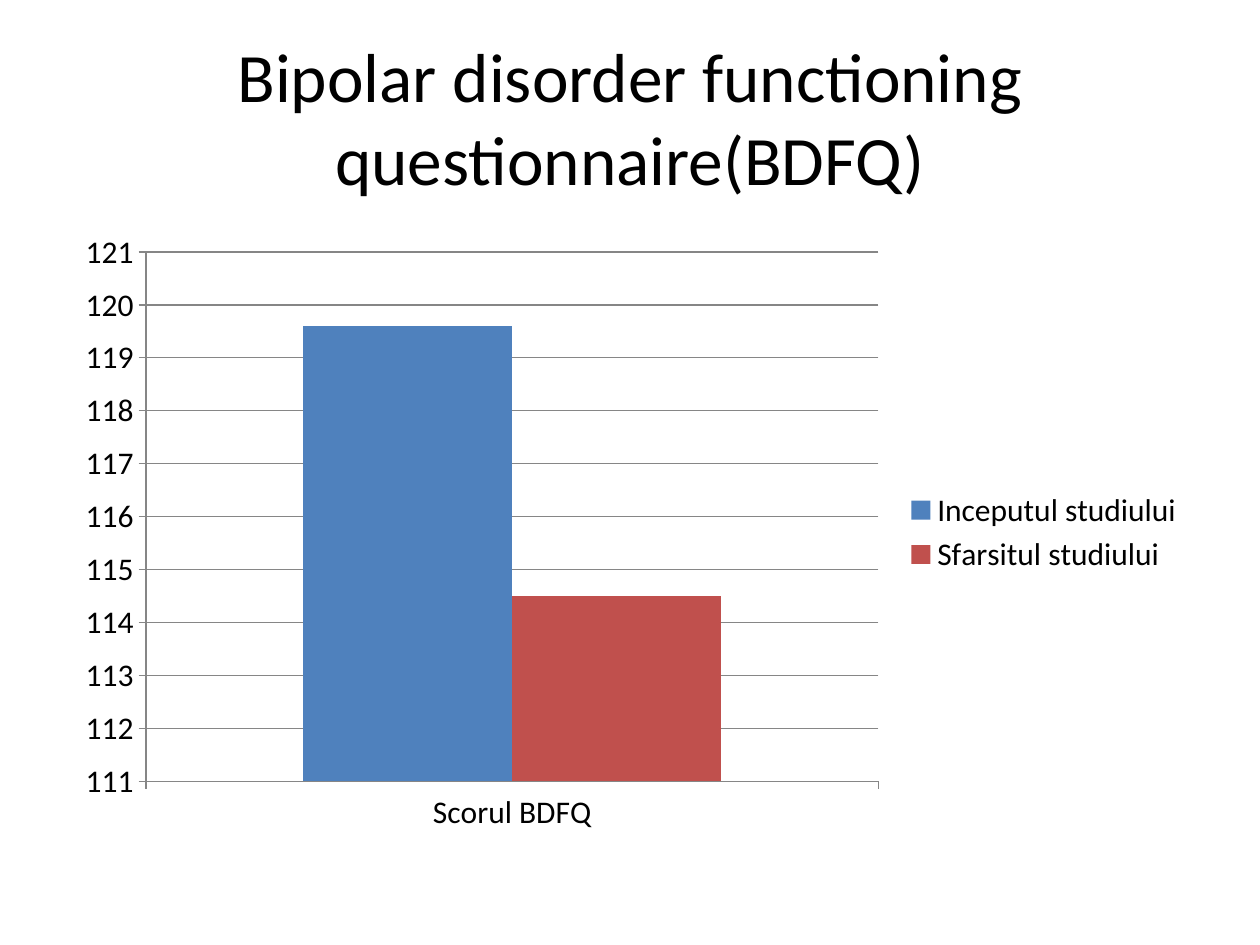
from typing import NamedTuple

from pptx import Presentation
from pptx.chart.data import CategoryChartData
from pptx.dml.color import RGBColor
from pptx.enum.chart import XL_CHART_TYPE, XL_LEGEND_POSITION, XL_TICK_MARK
from pptx.enum.text import MSO_ANCHOR, PP_ALIGN
from pptx.util import Pt

COLUMNS = XL_CHART_TYPE.COLUMN_CLUSTERED
RIGHT = XL_LEGEND_POSITION.RIGHT
OUTSIDE, NO_TICK = XL_TICK_MARK.OUTSIDE, XL_TICK_MARK.NONE
MIDDLE, CENTER = MSO_ANCHOR.MIDDLE, PP_ALIGN.CENTER

FONT = "Calibri"
BLACK, GREY = "000000", "868686"


class Box(NamedTuple):
    left: float
    top: float
    width: float
    height: float


class Series(NamedTuple):
    name: str
    score: float
    color: str


TITLE_BOX = Box(36, 21.6, 648, 90)
CHART_BOX = Box(36, 126, 648, 356.4)
SERIES = [
    Series("Inceputul studiului", 119.6, "4F81BD"),
    Series("Sfarsitul studiului", 114.5, "C0504D"),
]


def rgb(color: str) -> RGBColor:
    return RGBColor.from_string(color)


def style(font, size: float) -> None:
    font.name = FONT
    font.size = Pt(size)
    font.color.rgb = rgb(BLACK)


def rule(line) -> None:
    """Give an axis or grid line its grey stroke."""
    line.color.rgb = rgb(GREY)
    line.width = Pt(0.75)


def add_title(slide, box: Box, text: str) -> None:
    frame = slide.shapes.add_textbox(*map(Pt, box)).text_frame
    frame.word_wrap = True
    frame.vertical_anchor = MIDDLE
    para = frame.paragraphs[0]
    para.alignment = CENTER
    run = para.add_run()
    run.text = text
    style(run.font, 39.6)


def add_scores(slide, box: Box, label: str, series: list[Series]) -> None:
    data = CategoryChartData()
    data.categories = [label]
    for item in series:
        data.add_series(item.name, [item.score])
    chart = slide.shapes.add_chart(COLUMNS, *map(Pt, box), data).chart
    style(chart.font, 18)
    chart.has_title = False
    chart.has_legend = True
    chart.legend.position = RIGHT
    chart.legend.include_in_layout = False

    scale = chart.value_axis
    scale.minimum_scale, scale.maximum_scale, scale.major_unit = 111, 121, 1
    scale.has_major_gridlines = True
    rule(scale.major_gridlines.format.line)
    for axis in (chart.category_axis, scale):
        axis.major_tick_mark = OUTSIDE
        axis.minor_tick_mark = NO_TICK
        rule(axis.format.line)

    plot = chart.plots[0]
    plot.gap_width = 150
    plot.vary_by_categories = False
    for bar, item in zip(plot.series, series):
        bar.format.fill.solid()
        bar.format.fill.fore_color.rgb = rgb(item.color)


def main() -> None:
    deck = Presentation()
    deck.slide_width, deck.slide_height = Pt(720), Pt(540)
    slide = deck.slides.add_slide(deck.slide_layouts[6])
    add_title(slide, TITLE_BOX, "Bipolar disorder functioning questionnaire(BDFQ)")
    add_scores(slide, CHART_BOX, "Scorul BDFQ", SERIES)
    deck.save("out.pptx")


if __name__ == "__main__":
    main()
